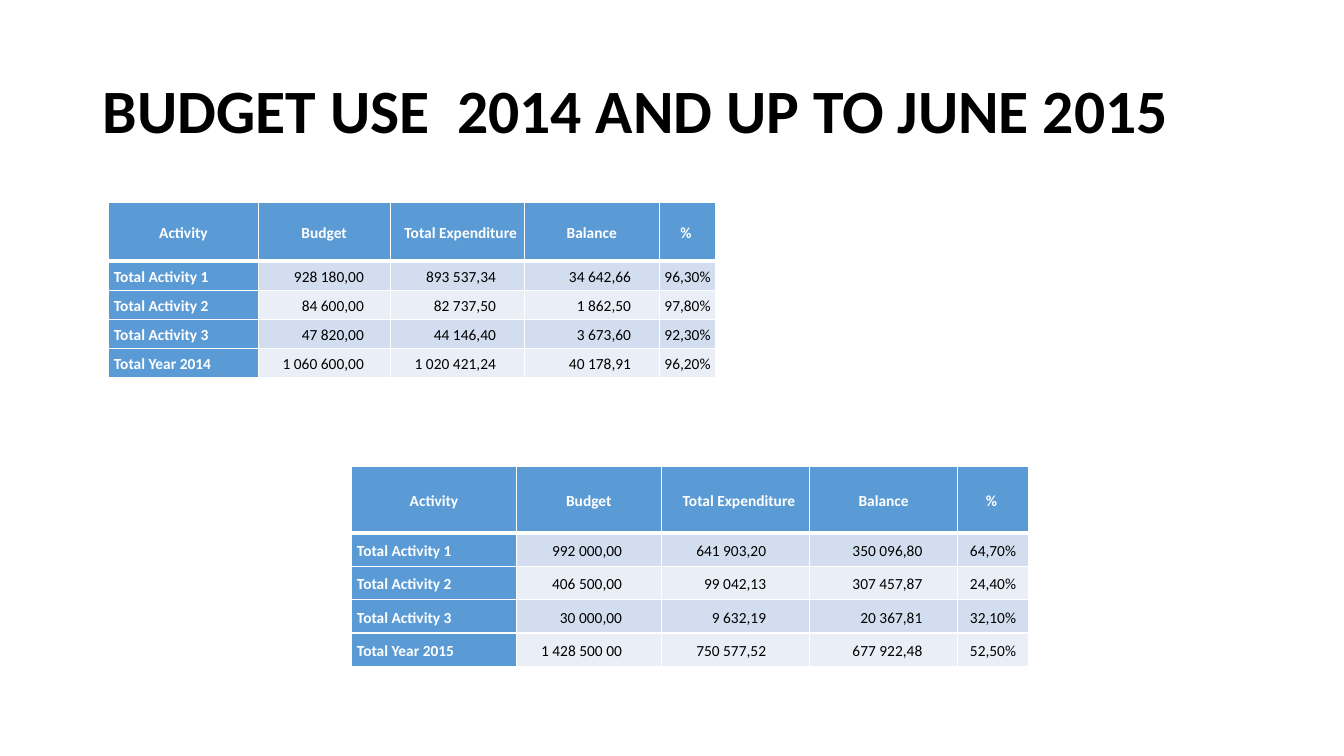
from lxml import etree
from pptx import Presentation
from pptx.dml.color import RGBColor
from pptx.enum.text import MSO_ANCHOR, MSO_AUTO_SIZE, PP_ALIGN
from pptx.oxml.ns import qn
from pptx.util import Inches, Pt

WHITE = RGBColor(0xFF, 0xFF, 0xFF)
BLACK = RGBColor(0x00, 0x00, 0x00)
BLUE = RGBColor(0x5B, 0x9B, 0xD5)
BAND_DARK = RGBColor(0xD2, 0xDE, 0xEF)
BAND_LIGHT = RGBColor(0xEA, 0xEF, 0xF7)

HEADERS = ["Activity", "Budget", "Total Expenditure", "Balance", "%"]
HEADER_INSETS = [(0.05, 0.05), (0.05, 0.05), (0.12, 0.05), (0.05, 0.05), (0.05, 0.08)]
BUDGET_2014 = [
    ["Total Activity 1", "928 180,00", "893 537,34", "34 642,66", "96,30%"],
    ["Total Activity 2", "84 600,00", "82 737,50", "1 862,50", "97,80%"],
    ["Total Activity 3", "47 820,00", "44 146,40", "3 673,60", "92,30%"],
    ["Total Year 2014", "1 060 600,00", "1 020 421,24", "40 178,91", "96,20%"],
]
BUDGET_2015 = [
    ["Total Activity 1", "992 000,00", "641 903,20", "350 096,80", "64,70%"],
    ["Total Activity 2", "406 500,00", "99 042,13", "307 457,87", "24,40%"],
    ["Total Activity 3", "30 000,00", "9 632,19", "20 367,81", "32,10%"],
    ["Total Year 2015", "1 428 500 00", "750 577,52", "677 922,48", "52,50%"],
]


def set_format(target, values):
    for name, value in values.items():
        setattr(target, name, value)


def add_title(s, text, left, top, width, height):
    title = s.shapes.title
    set_format(title, {"left": Inches(left), "top": Inches(top),
                       "width": Inches(width), "height": Inches(height)})
    tf = title.text_frame
    set_format(tf, {"vertical_anchor": MSO_ANCHOR.MIDDLE, "word_wrap": True,
                    "auto_size": MSO_AUTO_SIZE.NONE})
    p = tf.paragraphs[0]
    set_format(p, {"alignment": PP_ALIGN.LEFT, "line_spacing": 0.9})
    r = p.add_run()
    r.text = text
    set_format(r.font, {"name": "Calibri", "size": Pt(44), "bold": True})
    r.font.color.rgb = BLACK


def add_borders(cell, widths):
    tc_pr = cell._tc.get_or_add_tcPr()
    for side, width in zip("LRTB", widths):
        ln = etree.SubElement(tc_pr, qn(f"a:ln{side}"), w=str(Pt(width)))
        fill = etree.SubElement(ln, qn("a:solidFill"))
        etree.SubElement(fill, qn("a:srgbClr"), val=str(WHITE))


def fill_cell(cell, text, fill, color, bold, alignment, insets, borders):
    add_borders(cell, borders)
    cell.fill.solid()
    cell.fill.fore_color.rgb = fill
    left, right = insets
    set_format(cell, {"margin_left": Inches(left), "margin_right": Inches(right),
                      "margin_top": 0, "margin_bottom": 0,
                      "vertical_anchor": MSO_ANCHOR.MIDDLE})
    p = cell.text_frame.paragraphs[0]
    set_format(p, {"alignment": alignment, "line_spacing": 1.15})
    r = p.add_run()
    r.text = text
    set_format(r.font, {"name": "Calibri", "size": Pt(11), "bold": bold})
    r.font.color.rgb = color


def add_budget_table(s, rows, left, top, widths, row_height, right_insets):
    heights = [2 * row_height] + [row_height] * len(rows)
    table = s.shapes.add_table(len(heights), len(widths), Inches(left), Inches(top),
                               Inches(sum(widths)), Inches(sum(heights))).table
    for column, width in zip(table.columns, widths):
        column.width = Inches(width)
    for row, height in zip(table.rows, heights):
        row.height = Inches(height)
    for j, (text, insets) in enumerate(zip(HEADERS, HEADER_INSETS)):
        fill_cell(table.cell(0, j), text, BLUE, WHITE, True, PP_ALIGN.CENTER,
                  insets, (1, 1, 1, 3))
    alignments = [PP_ALIGN.LEFT] + [PP_ALIGN.RIGHT] * 3 + [PP_ALIGN.CENTER]
    for i, row in enumerate(rows, 1):
        band = BAND_DARK if i % 2 else BAND_LIGHT
        borders = (1, 1, 3 if i == 1 else 1, 1)
        for j, text in enumerate(row):
            label = j == 0
            fill_cell(table.cell(i, j), text, BLUE if label else band,
                      WHITE if label else BLACK, label, alignments[j],
                      (0.05, right_insets[j]), borders)


def main():
    prs = Presentation()
    prs.slide_width, prs.slide_height = Inches(13.33), Inches(7.5)
    s = prs.slides.add_slide(prs.slide_layouts[5])
    add_title(s, "BUDGET USE  2014 AND UP TO JUNE 2015", 0.92, 0.4, 11.5, 1.45)
    add_budget_table(s, BUDGET_2014, 1.08, 2.01, [1.48, 1.31, 1.33, 1.34, 0.56],
                     0.29, [0.05, 0.26, 0.28, 0.28, 0.05])
    add_budget_table(s, BUDGET_2015, 3.49, 4.63, [1.63, 1.44, 1.47, 1.47, 0.7],
                     0.33, [0.05, 0.39, 0.43, 0.35, 0.05])
    prs.save("out.pptx")


if __name__ == "__main__":
    main()
